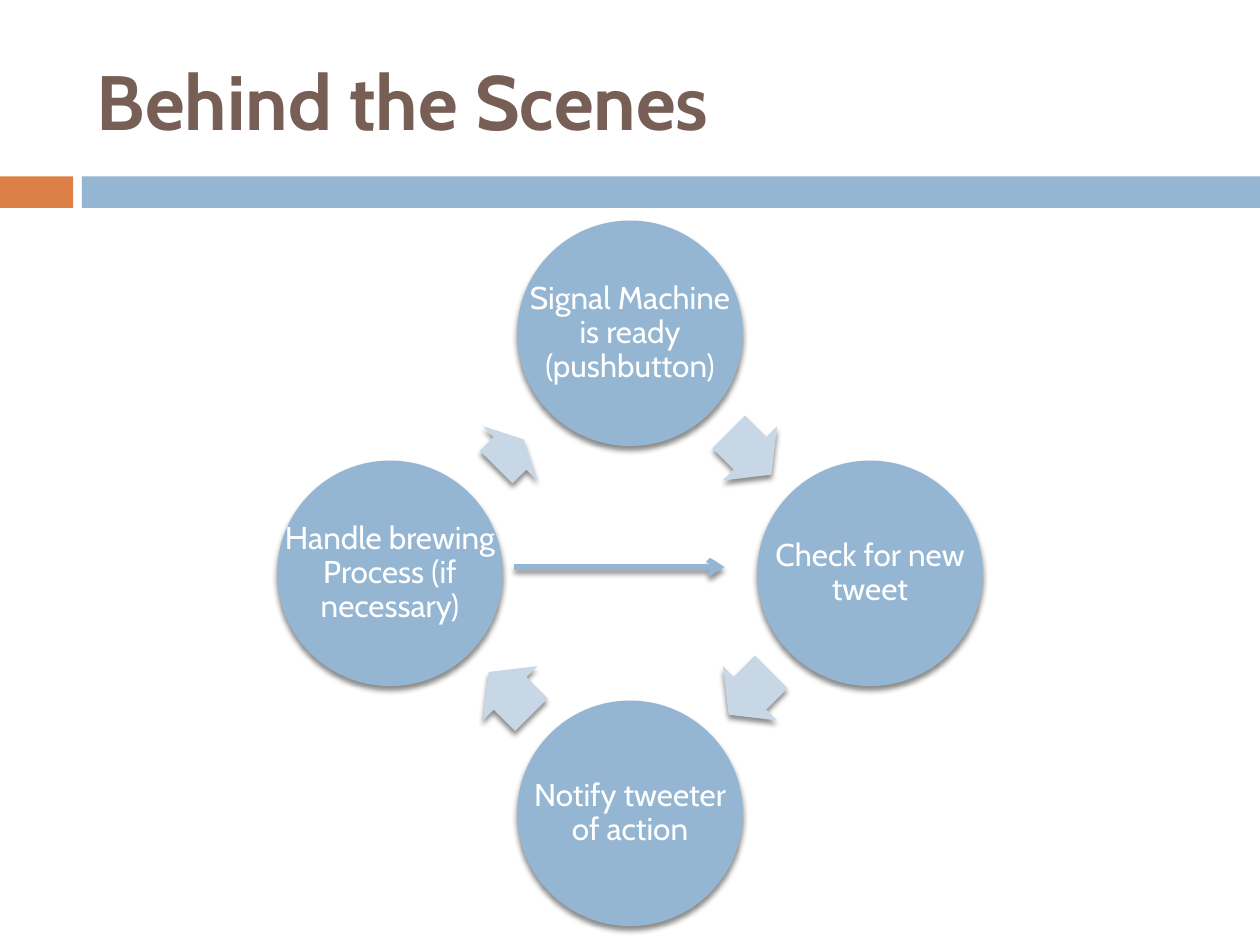
from dataclasses import dataclass
from math import cos, radians, sin

from pptx import Presentation
from pptx.dml.color import RGBColor as RGB
from pptx.enum.shapes import MSO_CONNECTOR as CONN, MSO_SHAPE as SHAPE
from pptx.enum.text import MSO_ANCHOR as ANCHOR, PP_ALIGN as ALIGN
from pptx.oxml import parse_xml
from pptx.oxml.ns import nsdecls
from pptx.util import Inches, Pt


@dataclass(frozen=True)
class Theme:
    """Colours, font and type sizes of the slide."""
    orange: RGB = RGB(0xDD, 0x80, 0x47)
    blue: RGB = RGB(0x94, 0xB6, 0xD2)
    pale: RGB = RGB(0xC8, 0xD7, 0xE5)
    brown: RGB = RGB(0x77, 0x5F, 0x55)
    white: RGB = RGB(0xFF, 0xFF, 0xFF)
    font: str = "Cabin"
    title: Pt = Pt(44)
    label: Pt = Pt(18)


THEME = Theme()
STEPS = [
    "Signal Machine is ready (pushbutton)",
    "Check for new tweet",
    "Notify tweeter of action",
    "Handle brewing Process (if necessary)",
]
ARROW_LENGTHS = [0.48, 0.48, 0.48, 0.31]


def add_shadow(sp):
    """Give a shape or connector a soft shadow that falls straight down."""
    sp._element.spPr.append(parse_xml(
        f'<a:effectLst {nsdecls("a")}>'
        '<a:outerShdw blurRad="38100" dist="30480" dir="5400000" rotWithShape="0">'
        '<a:srgbClr val="000000"><a:alpha val="45000"/></a:srgbClr>'
        '</a:outerShdw></a:effectLst>'))


def add_filled(slide, kind, box, color):
    """Add a preset shape with a plain fill and no outline."""
    sp = slide.shapes.add_shape(kind, *map(Inches, box))
    sp.fill.solid()
    sp.fill.fore_color.rgb = color
    sp.line.fill.background()
    return sp


def add_text(slide, box, text, size, color, bold=False):
    """Add a wrapped, vertically centred text box and return it."""
    sp = slide.shapes.add_textbox(*map(Inches, box))
    tf = sp.text_frame
    tf.word_wrap = True
    tf.vertical_anchor = ANCHOR.MIDDLE
    tf.text = text
    font = tf.paragraphs[0].runs[0].font
    font.name, font.size, font.bold = THEME.font, size, bold
    font.color.rgb = color
    return sp


def add_header(slide, left, top, width, height):
    """Place the title above a two-colour band."""
    add_text(slide, (left + 0.67, top + 0.25, 8.92, 1.08), "Behind the Scenes",
             THEME.title, THEME.brown, bold=True)
    band = 0.25
    band_top = top + height - band
    for start, end, color in ((0, 0.58, THEME.orange), (0.65, width, THEME.blue)):
        sp = add_filled(slide, SHAPE.RECTANGLE,
                        (left + start, band_top, end - start, band), color)
        sp.shadow.inherit = False


def add_step(slide, box, text):
    """Place one circle of the cycle with its label."""
    add_shadow(add_filled(slide, SHAPE.OVAL, box, THEME.blue))
    tf = add_text(slide, box, text, THEME.label, THEME.white).text_frame
    tf.margin_left = tf.margin_right = tf.margin_top = tf.margin_bottom = Inches(0.03)
    p = tf.paragraphs[0]
    p.alignment = ALIGN.CENTER
    p.line_spacing = 0.9


def add_block_arrow(slide, cx, cy, length, angle):
    """Place a turned block arrow centred on a point."""
    height = 0.61
    sp = add_filled(slide, SHAPE.RIGHT_ARROW,
                    (cx - length / 2, cy - height / 2, length, height), THEME.pale)
    sp.adjustments[0], sp.adjustments[1] = 0.6, 0.5
    sp.rotation = angle
    add_shadow(sp)


def add_shortcut(slide, x1, x2, y):
    """Draw the level arrow that skips the notification step."""
    line = slide.shapes.add_connector(
        CONN.STRAIGHT, Inches(x1), Inches(y), Inches(x2), Inches(y))
    line.line.color.rgb = THEME.blue
    line.line.width = Pt(3)
    line.line._get_or_add_ln().append(
        parse_xml(f'<a:tailEnd {nsdecls("a")} type="arrow"/>'))
    add_shadow(line)


def add_cycle(slide, left, top, width, height):
    """Place the steps clockwise from the top, with arrows between them."""
    size = 1.79
    cx, cy = left + width / 2, top + height / 2
    radius = (width - size) / 2
    for i, (text, length) in enumerate(zip(STEPS, ARROW_LENGTHS)):
        turn = radians(90 * i)
        x, y = cx + radius * sin(turn), cy - radius * cos(turn)
        add_step(slide, (x - size / 2, y - size / 2, size, size), text)
        turn = radians(90 * i + 45)
        reach = radius * cos(radians(45))
        add_block_arrow(slide, cx + reach * sin(turn), cy - reach * cos(turn),
                        length, 90 * i + 45)
    add_shortcut(slide, left + 1.88, left + 3.55, cy - 0.05)


def main():
    """Build and save the slide."""
    prs = Presentation()
    prs.slide_width, prs.slide_height = Inches(10), Inches(7.5)
    slide = prs.slides.add_slide(prs.slide_layouts[6])
    add_header(slide, 0, 0, 10, 1.65)
    add_cycle(slide, 2.2, 1.75, 5.6, 5.6)
    prs.save("out.pptx")


if __name__ == "__main__":
    main()
